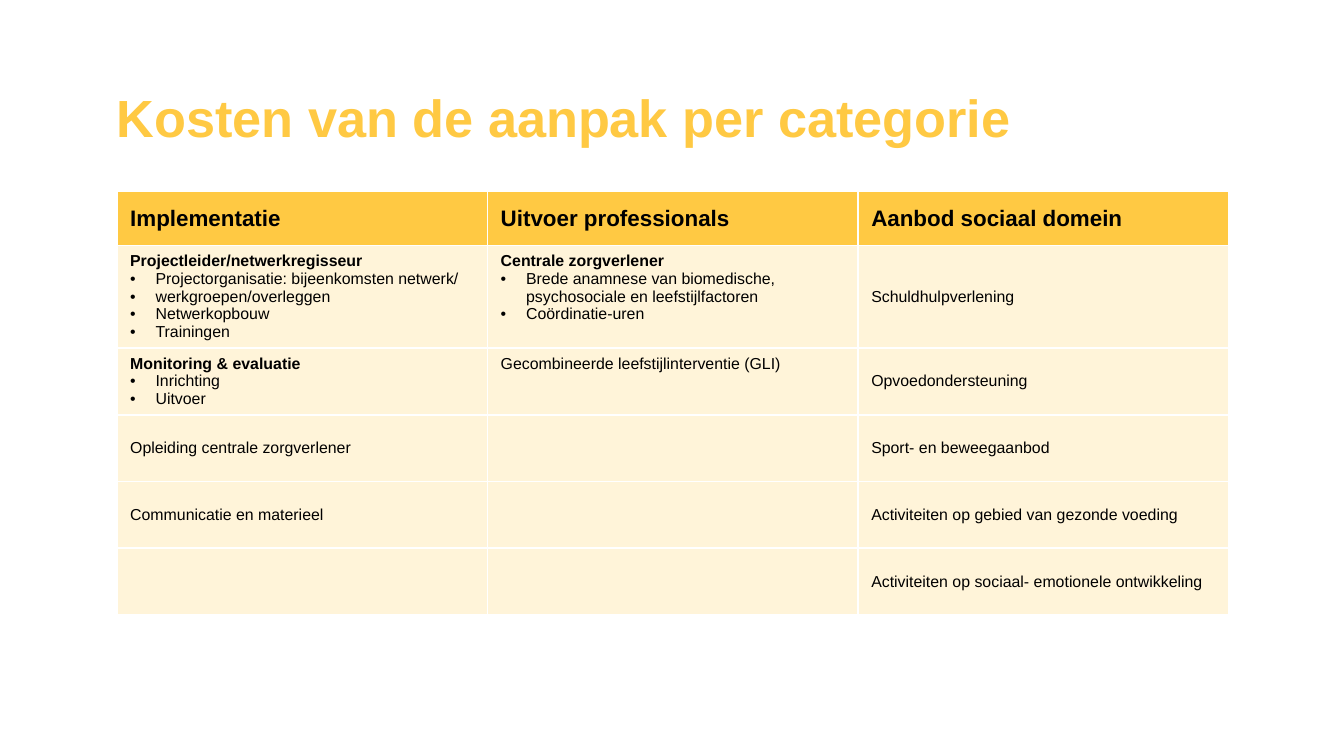
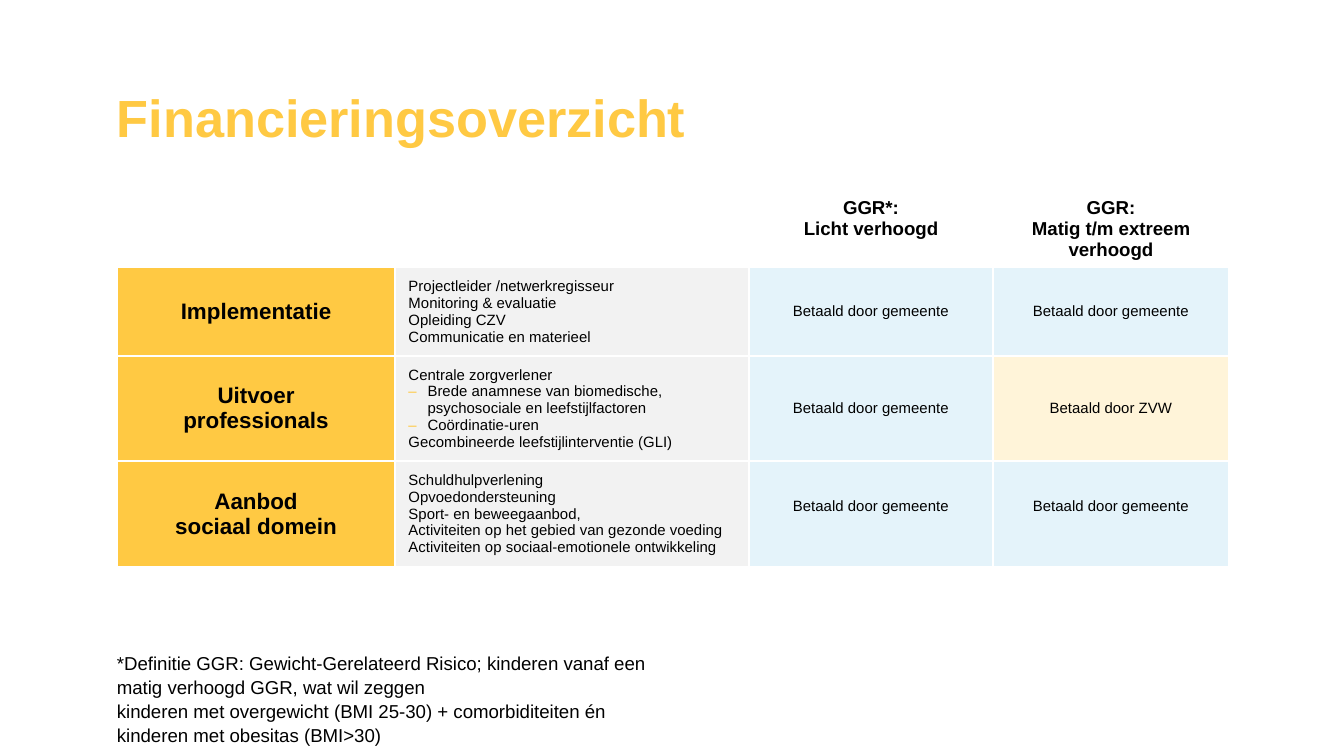
from typing import NamedTuple

from lxml import etree
from pptx import Presentation
from pptx.dml.color import RGBColor
from pptx.enum import text
from pptx.oxml import ns
from pptx.util import Cm, Pt

YELLOW = RGBColor(0xFF, 0xC9, 0x43)
CREAM = RGBColor(0xFF, 0xF4, 0xD9)
GREY = RGBColor(0xF2, 0xF2, 0xF2)
BLUE = RGBColor(0xE4, 0xF3, 0xFA)
WHITE = RGBColor(0xFF, 0xFF, 0xFF)
BLACK = RGBColor(0, 0, 0)

FONT = "Arial"
LEFT, WIDTH = Cm(2.21), Cm(21.01)
TABLE_TOP = Cm(3.61)
TOP, MIDDLE = text.MSO_ANCHOR.TOP, text.MSO_ANCHOR.MIDDLE
CENTER = text.PP_ALIGN.CENTER


class Line(NamedTuple):
    words: str
    bold: bool = False
    bullet: str = ""


def dot(words):
    return Line(words, bullet="•")


def dash(words):
    return Line(words, bullet="–")


COST_TITLE = "Kosten van de aanpak per categorie"
COST_HEADERS = ["Implementatie", "Uitvoer professionals", "Aanbod sociaal domein"]
COST_ROWS = [
    [[Line("Projectleider/netwerkregisseur", bold=True),
      dot("Projectorganisatie: bijeenkomsten netwerk/"),
      dot("werkgroepen/overleggen"),
      dot("Netwerkopbouw"),
      dot("Trainingen")],
     [Line("Centrale zorgverlener", bold=True),
      dot("Brede anamnese van biomedische, psychosociale en leefstijlfactoren"),
      dot("Coördinatie-uren")],
     [Line("Schuldhulpverlening")]],
    [[Line("Monitoring & evaluatie", bold=True), dot("Inrichting"), dot("Uitvoer")],
     [Line("Gecombineerde leefstijlinterventie (GLI)")],
     [Line("Opvoedondersteuning")]],
    [[Line("Opleiding centrale zorgverlener")], [], [Line("Sport- en beweegaanbod")]],
    [[Line("Communicatie en materieel")], [],
     [Line("Activiteiten op gebied van gezonde voeding")]],
    [[], [], [Line("Activiteiten op sociaal- emotionele ontwikkeling")]],
]
COST_COLUMNS = [WIDTH // 3] * 3
COST_HEIGHTS = [Cm(1.03), Cm(1.93)] + [Cm(1.26)] * 4

FUNDING_TITLE = "Financieringsoverzicht"
FUNDING_HEADERS = [
    [], [],
    ["GGR*:", "Licht verhoogd"],
    ["GGR:", "Matig t/m extreem", "verhoogd"],
]
MUNICIPALITY, INSURANCE = "Betaald door gemeente", "Betaald door ZVW"
PAYER_FILLS = {MUNICIPALITY: BLUE, INSURANCE: CREAM}
# category, activities, payers
FUNDING_ROWS = [
    (["Implementatie"],
     [Line("Projectleider /netwerkregisseur"),
      Line("Monitoring & evaluatie"),
      Line("Opleiding CZV"),
      Line("Communicatie en materieel")],
     [MUNICIPALITY, MUNICIPALITY]),
    (["Uitvoer", "professionals"],
     [Line("Centrale zorgverlener"),
      dash("Brede anamnese van biomedische, psychosociale en leefstijlfactoren"),
      dash("Coördinatie-uren"),
      Line("Gecombineerde leefstijlinterventie (GLI)")],
     [MUNICIPALITY, INSURANCE]),
    (["Aanbod", "sociaal domein"],
     [Line("Schuldhulpverlening"),
      Line("Opvoedondersteuning"),
      Line("Sport- en beweegaanbod,"),
      Line("Activiteiten op het gebied van gezonde voeding"),
      Line("Activiteiten op sociaal-emotionele ontwikkeling")],
     [MUNICIPALITY, MUNICIPALITY]),
]
FUNDING_COLUMNS = [Cm(5.26), Cm(6.68), Cm(4.62), Cm(4.45)]
FUNDING_HEIGHTS = [Cm(1.44), Cm(1.66), Cm(1.98), Cm(1.98)]
FOOTNOTE = [
    Line("*Definitie GGR: Gewicht-Gerelateerd Risico; kinderen vanaf een "
         "matig verhoogd GGR, wat wil zeggen"),
    Line("kinderen met overgewicht (BMI 25-30) + comorbiditeiten én "
         "kinderen met obesitas (BMI>30)"),
]


def bold_lines(words):
    return [Line(item, bold=True) for item in words]


def set_bullet(para, mark, indent, color):
    props = para._p.get_or_add_pPr()
    props.set("marL", str(indent))
    props.set("indent", str(-indent))
    if color is not None:
        holder = etree.SubElement(props, ns.qn("a:buClr"))
        etree.SubElement(holder, ns.qn("a:srgbClr"), val=str(color))
    etree.SubElement(props, ns.qn("a:buFont"), typeface=FONT)
    etree.SubElement(props, ns.qn("a:buChar"), char=mark)


def write(frame, lines, size, color=BLACK, align=text.PP_ALIGN.LEFT, spacing=None,
          indent=Cm(0.48), bullet_color=None):
    for index, line in enumerate(lines):
        para = frame.paragraphs[0] if index == 0 else frame.add_paragraph()
        para.alignment = align
        if spacing:
            para.line_spacing = spacing
        if line.bullet:
            set_bullet(para, line.bullet, indent, bullet_color)
        span = para.add_run()
        span.text = line.words
        span.font.name = FONT
        span.font.size = Pt(size)
        span.font.bold = line.bold
        span.font.color.rgb = color


def set_margins(frame, left=0, top=0, right=0, bottom=0):
    frame.margin_left, frame.margin_top = left, top
    frame.margin_right, frame.margin_bottom = right, bottom


def add_page(deck, title):
    page = deck.slides.add_slide(deck.slide_layouts[5])
    box = page.shapes.title
    box.left, box.top, box.width, box.height = LEFT, Cm(1.6), WIDTH, Cm(1.3)
    frame = box.text_frame
    frame.auto_size = text.MSO_AUTO_SIZE.NONE
    frame.vertical_anchor = MIDDLE
    set_margins(frame, top=Cm(0.05))
    write(frame, bold_lines([title]), 28, YELLOW, spacing=0.9)
    return page


def add_grid(page, columns, heights):
    """Add an unstyled table with thin white borders."""
    table = page.shapes.add_table(len(heights), len(columns), LEFT, TABLE_TOP,
                                  sum(columns), sum(heights)).table
    table.first_row = table.horz_banding = False
    for column, width in zip(table.columns, columns):
        column.width = width
    for row, height in zip(table.rows, heights):
        row.height = height
    for cell in table.iter_cells():
        cell.fill.background()
        props = cell._tc.get_or_add_tcPr()
        for place, side in enumerate(("lnL", "lnR", "lnT", "lnB")):
            border = etree.Element(ns.qn(f"a:{side}"), w=str(Pt(1)))
            fill = etree.SubElement(border, ns.qn("a:solidFill"))
            etree.SubElement(fill, ns.qn("a:srgbClr"), val=str(WHITE))
            props.insert(place, border)
    return table


def fill_cell(cell, lines, size, fill=None, anchor=TOP, pad=Cm(0.13), **style):
    if fill is not None:
        cell.fill.solid()
        cell.fill.fore_color.rgb = fill
    cell.vertical_anchor = anchor
    set_margins(cell, Cm(0.25), pad, Cm(0.25), pad)
    write(cell.text_frame, lines, size, **style)


def build_costs(deck):
    page = add_page(deck, COST_TITLE)
    table = add_grid(page, COST_COLUMNS, COST_HEIGHTS)
    for col, header in enumerate(COST_HEADERS):
        fill_cell(table.cell(0, col), bold_lines([header]), 12, YELLOW, MIDDLE)
    for row, cells in enumerate(COST_ROWS, 1):
        for col, lines in enumerate(cells):
            at_top = row <= 2 and col < 2
            fill_cell(table.cell(row, col), lines, 8.5, CREAM, TOP if at_top else MIDDLE)


def build_funding(deck):
    page = add_page(deck, FUNDING_TITLE)
    table = add_grid(page, FUNDING_COLUMNS, FUNDING_HEIGHTS)
    for col, header in enumerate(FUNDING_HEADERS):
        fill_cell(table.cell(0, col), bold_lines(header), 10, align=CENTER)
    pad = Cm(0.2)
    for row, (category, activities, payers) in enumerate(FUNDING_ROWS, 1):
        fill_cell(table.cell(row, 0), bold_lines(category), 12, YELLOW, MIDDLE, pad,
                  align=CENTER)
        fill_cell(table.cell(row, 1), activities, 8, GREY, pad=pad,
                  indent=Cm(0.36), bullet_color=YELLOW)
        for col, payer in enumerate(payers, 2):
            cell = table.cell(row, col)
            fill_cell(cell, [Line(payer)], 8, PAYER_FILLS[payer], MIDDLE, pad, align=CENTER)
            if row == len(FUNDING_ROWS):
                cell.margin_bottom = Cm(0.5)  # lifts the last row's payers

    box = page.shapes.add_textbox(LEFT, Cm(12.29), Cm(10.21), Cm(1))
    box.text_frame.word_wrap = True
    set_margins(box.text_frame)
    write(box.text_frame, FOOTNOTE, 10, spacing=1.07)


def main():
    deck = Presentation()
    deck.slide_width, deck.slide_height = Cm(25.4), Cm(14.29)
    build_costs(deck)
    build_funding(deck)
    deck.save("out.pptx")


if __name__ == "__main__":
    main()
